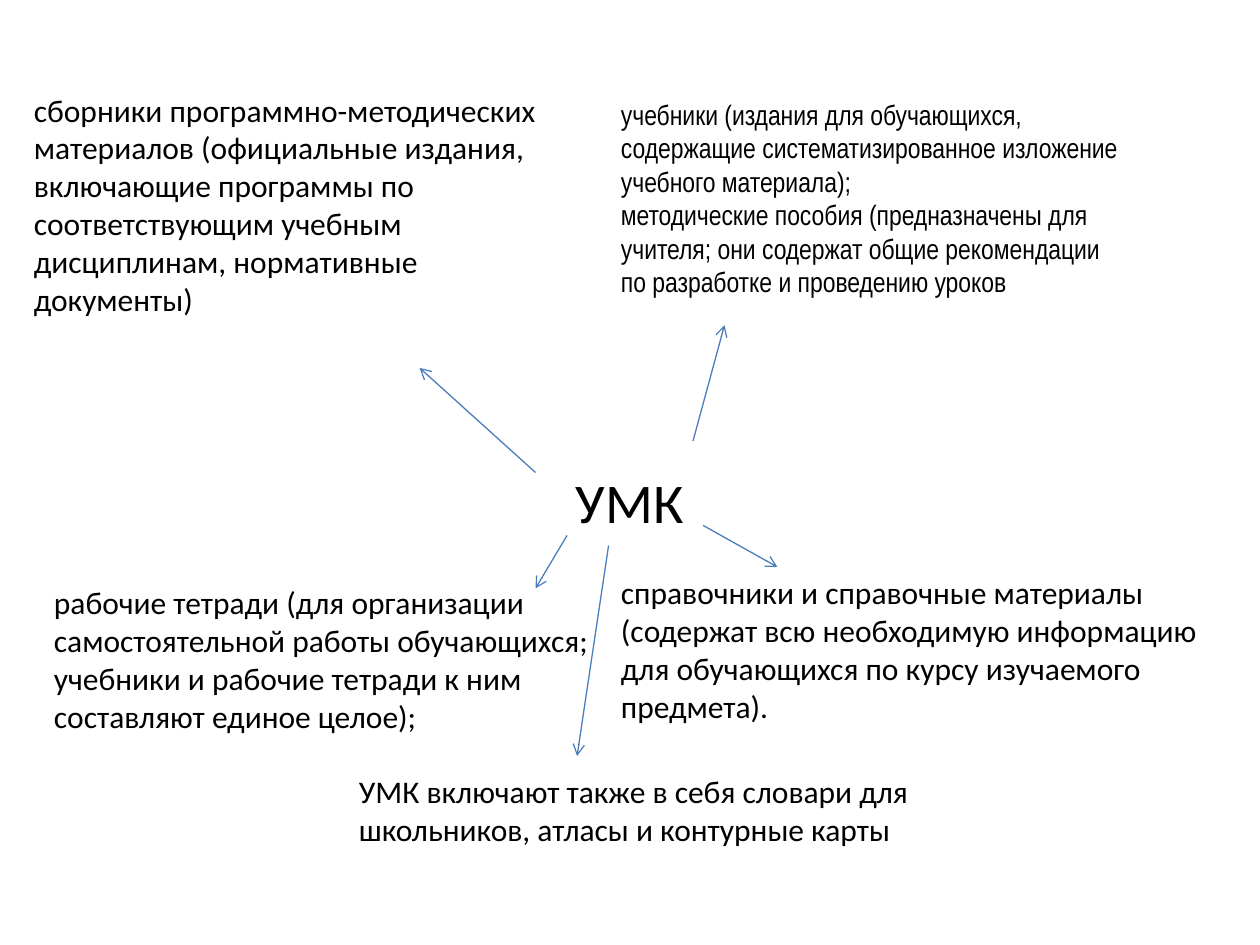
import pptx
import pptx.dml.color
import pptx.enum.shapes
import pptx.enum.text
import pptx.oxml.ns
import pptx.util
from lxml import etree
from pptx.util import Inches

COLORS = {"text": "000000", "arrow": "4B7EBC"}
NOTE = {"name": "Calibri", "size": pptx.util.Pt(18)}
NARROW = {"name": "Arial Narrow", "size": pptx.util.Pt(16)}
CENTER = {"name": "Calibri", "size": pptx.util.Pt(32)}

NOTES = [
    ((0.17, 0.67, 4.42, 1.92), NOTE, 0.05, [
        "сборники программно-методических материалов (официальные издания, "
        "включающие программы по соответствующим учебным дисциплинам, "
        "нормативные документы)"]),
    ((4.83, 0.75, 4.25, 2.22), NARROW, 0.02, [
        "учебники (издания для обучающихся, содержащие систематизированное "
        "изложение учебного материала);",
        "методические пособия (предназначены для учителя; они содержат общие "
        "рекомендации по разработке и проведению уроков"]),
    ((0.33, 4.58, 5, 1.31), NOTE, 0.05, [
        "рабочие тетради (для организации самостоятельной работы обучающихся; "
        "учебники и рабочие тетради к ним составляют единое целое);"]),
    ((4.83, 4.5, 4.83, 1.31), NOTE, 0.05, [
        "справочники и справочные материалы (содержат всю необходимую "
        "информацию для обучающихся по курсу изучаемого предмета)."]),
    ((2.75, 6.08, 5, 0.71), NOTE, 0.05, [
        "УМК включают также в себя словари для школьников, атласы и "
        "контурные карты"]),
]

ARROWS = [
    ((4.25, 3.75), (3.33, 2.92)),
    ((5.5, 3.5), (5.75, 2.58)),
    ((4.5, 4.25), (4.25, 4.67)),
    ((5.58, 4.17), (6.17, 4.5)),
    ((4.83, 4.33), (4.58, 6)),
]


def color(name):
    return pptx.dml.color.RGBColor.from_string(COLORS[name])


def add_text(page, place, style, top_margin, lines, align="LEFT"):
    box = page.shapes.add_textbox(*map(Inches, place))
    frame = box.text_frame
    frame.word_wrap = True
    frame.margin_top = Inches(top_margin)
    for index, line in enumerate(lines):
        para = frame.add_paragraph() if index else frame.paragraphs[0]
        para.alignment = getattr(pptx.enum.text.PP_ALIGN, align)
        span = para.add_run()
        span.text = line
        for key, value in style.items():
            setattr(span.font, key, value)
        span.font.color.rgb = color("text")


def add_arrow(page, start, end):
    arrow = page.shapes.add_connector(
        pptx.enum.shapes.MSO_CONNECTOR.STRAIGHT, *map(Inches, start + end))
    arrow.line.color.rgb = color("arrow")
    arrow.line.width = pptx.util.Pt(0.75)
    qn = pptx.oxml.ns.qn
    etree.SubElement(arrow.line._get_or_add_ln(), qn("a:tailEnd"), type="arrow")
    etree.SubElement(arrow._element.spPr, qn("a:effectLst"))


def main():
    deck = pptx.Presentation()
    deck.slide_width, deck.slide_height = Inches(10), Inches(7.5)
    page = deck.slides.add_slide(deck.slide_layouts[6])
    add_text(page, (0.5, 1.75, 9, 4.95), CENTER, 1.96, ["УМК"], "CENTER")
    for note in NOTES:
        add_text(page, *note)
    for start, end in ARROWS:
        add_arrow(page, start, end)
    deck.save("out.pptx")


if __name__ == "__main__":
    main()
